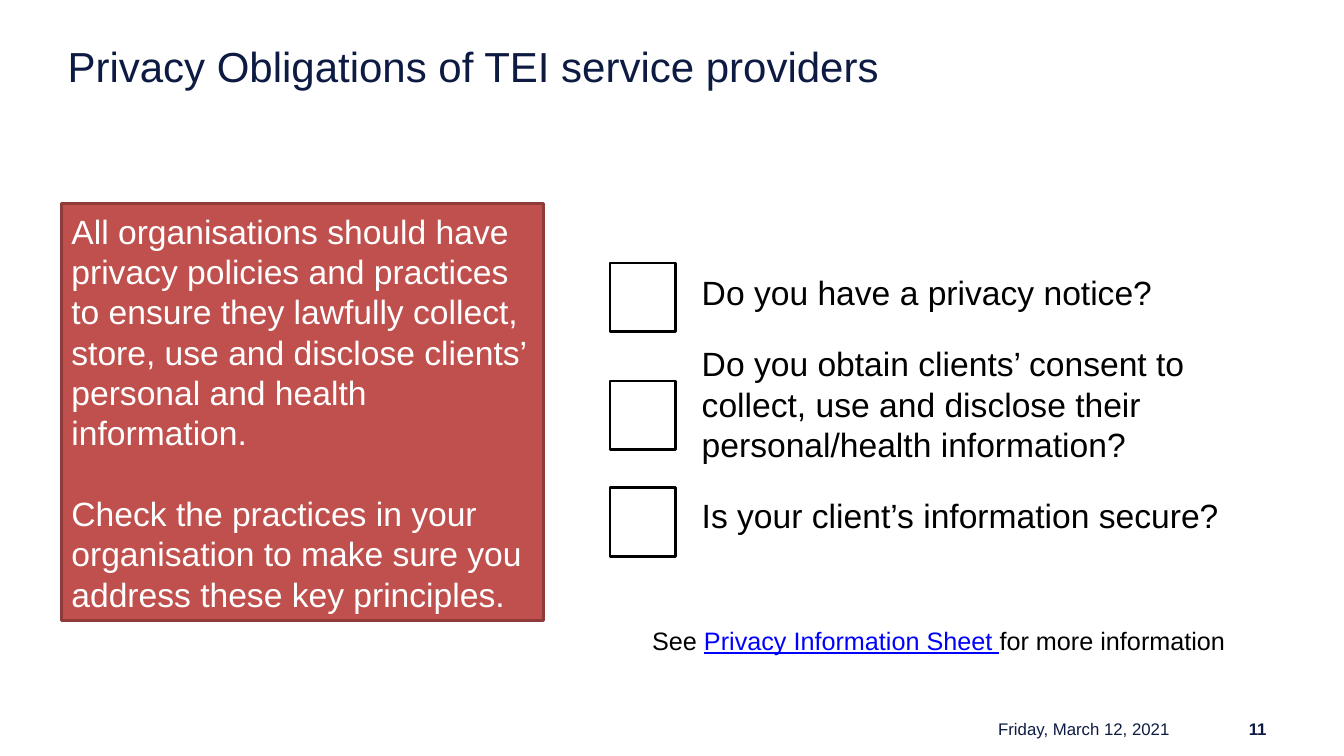
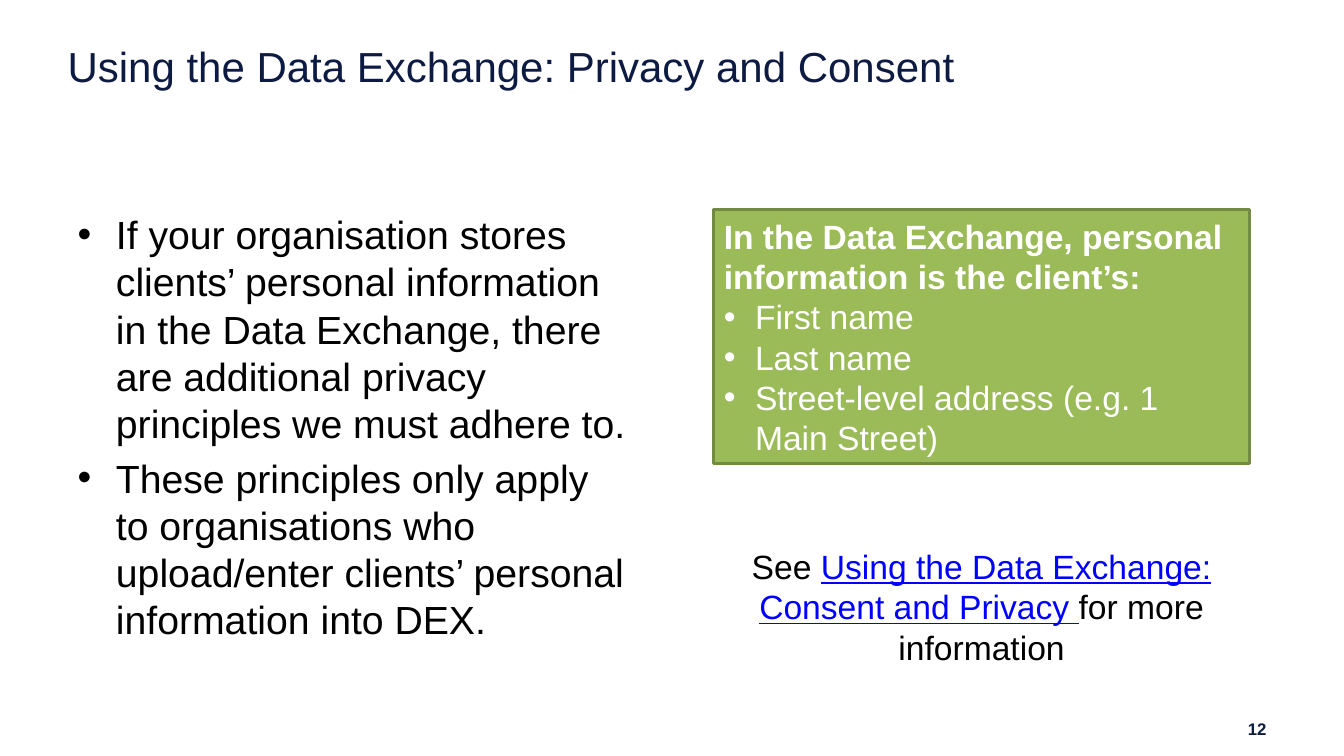
"""Build two slides on the privacy obligations of service providers."""
from lxml import etree
from pptx import Presentation
from pptx.dml.color import RGBColor
from pptx.enum.shapes import MSO_SHAPE
from pptx.enum.text import MSO_ANCHOR, MSO_AUTO_SIZE, PP_ALIGN
from pptx.oxml.ns import qn
from pptx.util import Inches, Pt

RECTANGLE = MSO_SHAPE.RECTANGLE
TOP, MIDDLE = MSO_ANCHOR.TOP, MSO_ANCHOR.MIDDLE
NO_FIT = MSO_AUTO_SIZE.NONE
LEFT, CENTER, RIGHT = PP_ALIGN.LEFT, PP_ALIGN.CENTER, PP_ALIGN.RIGHT

FONT = "Arial"
COLORS = {
    "navy": "0D1B43", "black": "000000", "white": "FFFFFF", "link": "0000FF",
    "red": "C0504D", "red line": "8E3B39",
    "green": "9BBB59", "green line": "738A42",
}
TITLE_BOX = (0.67, 0.4, 12, 0.66)
NUMBER_BOX = (11.57, 7.12, 1.09, 0.23)
DATE_BOX = (8.59, 7.12, 3.11, 0.23)


def rgb(name):
    """Return the named colour."""
    return RGBColor.from_string(COLORS[name])


def place(shape, box):
    """Move a shape to a box given in inches."""
    names = ("left", "top", "width", "height")
    for name, value in zip(names, box):
        setattr(shape, name, Inches(value))


def set_bullet(paragraph, indent):
    """Give a paragraph a hanging bullet, or none when indent is zero."""
    properties = paragraph._p.get_or_add_pPr()
    properties.set("marL", str(Inches(indent)))
    properties.set("indent", str(-Inches(indent)))
    if indent:
        etree.SubElement(properties, qn("a:buFont")).set("typeface", FONT)
        etree.SubElement(properties, qn("a:buChar")).set("char", "•")
    else:
        etree.SubElement(properties, qn("a:buNone"))


def write(shape, paragraphs, size, color, align=LEFT, anchor=TOP, gap=0, inset=None):
    """Fill a shape with paragraphs, each a pair of bullet indent and runs."""
    frame = shape.text_frame
    frame_format = {"word_wrap": True, "auto_size": NO_FIT, "vertical_anchor": anchor}
    if inset is not None:
        sides = ("left", "top", "right", "bottom")
        frame_format.update({f"margin_{side}": Inches(inset) for side in sides})
    for name, value in frame_format.items():
        setattr(frame, name, value)
    for index, (indent, runs) in enumerate(paragraphs):
        paragraph = frame.add_paragraph() if index else frame.paragraphs[0]
        set_bullet(paragraph, indent)
        paragraph.alignment = align
        paragraph.space_before = Pt(gap if index else 0)
        for text, changes in runs:
            run = paragraph.add_run()
            run.text = text
            font_format = {"name": FONT, "size": Pt(size), "bold": False, **changes}
            run_color = font_format.pop("color", color)
            for name, value in font_format.items():
                setattr(run.font, name, value)
            run.font.color.rgb = rgb(run_color)


def plain(*texts, indent=0, **changes):
    """Return one paragraph of a single run for each text."""
    return [(indent, [(text, changes)]) for text in texts]


def reference(link):
    """Return a sentence that points to further reading."""
    link_format = {"color": "link", "underline": True}
    return [(0, [("See ", {}), (link, link_format), ("for more information", {})])]


def add_text(slide, box, paragraphs, size, color, **layout):
    """Add a text box."""
    shape = slide.shapes.add_textbox(*map(Inches, box))
    write(shape, paragraphs, size, color, **layout)


def add_panel(slide, box, fill, line):
    """Add a filled and outlined rectangle."""
    panel = slide.shapes.add_shape(RECTANGLE, *map(Inches, box))
    panel.shadow.inherit = False
    panel.fill.solid()
    panel.fill.fore_color.rgb = rgb(fill)
    panel.line.color.rgb = rgb(line)
    panel.line.width = Pt(2)
    return panel


def add_slide(presentation, title, number, date=None):
    """Add a slide with its title and footer."""
    slide = presentation.slides.add_slide(presentation.slide_layouts[1])
    place(slide.shapes.title, TITLE_BOX)
    write(slide.shapes.title, plain(title), 30, "navy", inset=0)
    footer = {"align": RIGHT, "anchor": MIDDLE}
    add_text(slide, NUMBER_BOX, plain(number, bold=True), 12, "navy", **footer)
    if date:
        add_text(slide, DATE_BOX, plain(date), 12, "navy", **footer)
    return slide


def add_body(slide, box, paragraphs, size, gap):
    """Fill the body placeholder."""
    body = slide.placeholders[1]
    place(body, box)
    write(body, paragraphs, size, "black", gap=gap)


def add_checklist(slide, box, questions, box_tops):
    """Add questions with an empty tick box beside each."""
    left, top, width, height = box
    text_box = (left + 0.81, top, width - 0.81, height)
    add_body(slide, text_box, plain(*questions), 24, 22)
    for offset in box_tops:
        add_panel(slide, (left, top + offset, 0.65, 0.68), "white", "black")


def build_obligations(presentation):
    """Build the slide on obligations."""
    slide = add_slide(presentation, "Privacy Obligations of TEI service providers",
                      "11", "Friday, March 12, 2021")
    add_checklist(slide, (6.05, 2.65, 6.81, 4.11), (
        "Do you have a privacy notice?",
        "Do you obtain clients’ consent to collect, use and disclose their "
        "personal/health information?",
        "Is your client’s information secure?",
    ), (-0.04, 1.13, 2.19))
    principles = add_panel(slide, (0.61, 2.02, 4.78, 4.14), "red", "red line")
    write(principles, plain(
        "All organisations should have privacy policies and practices to ensure they "
        "lawfully collect, store, use and disclose clients’ personal and health "
        "information.",
        "Check the practices in your organisation to make sure you address these "
        "key principles.",
    ), 24, "white", anchor=MIDDLE, gap=29)
    add_text(slide, (6.37, 6.15, 6.77, 0.4),
             reference("Privacy Information Sheet "), 18, "black")


def build_consent(presentation):
    """Build the slide on consent."""
    slide = add_slide(presentation, "Using the Data Exchange: Privacy and Consent", "12")
    add_body(slide, (0.67, 2.04, 5.67, 4.52), plain(
        "If your organisation stores clients’ personal information in the Data "
        "Exchange, there are additional privacy principles we must adhere to.",
        "These principles only apply to organisations who upload/enter clients’ "
        "personal information into DEX.",
        indent=0.38,
    ), 28, 5.6)
    definition = add_panel(slide, (7.08, 2.08, 5.31, 2.52), "green", "green line")
    heading = plain("In the Data Exchange, personal information is the client’s:",
                    bold=True)
    items = plain("First name", "Last name",
                  "Street-level address (e.g. 1 Main Street)", indent=0.31)
    write(definition, heading + items, 24, "white", anchor=MIDDLE)
    further = add_panel(slide, (7.08, 5.36, 5.31, 1.31), "white", "white")
    write(further, reference("Using the Data Exchange: Consent and Privacy "),
          24, "black", align=CENTER, anchor=MIDDLE)


def main():
    """Build and save the presentation."""
    presentation = Presentation()
    presentation.slide_width = Inches(13.33)
    presentation.slide_height = Inches(7.5)
    build_obligations(presentation)
    build_consent(presentation)
    presentation.save("out.pptx")


if __name__ == "__main__":
    main()
